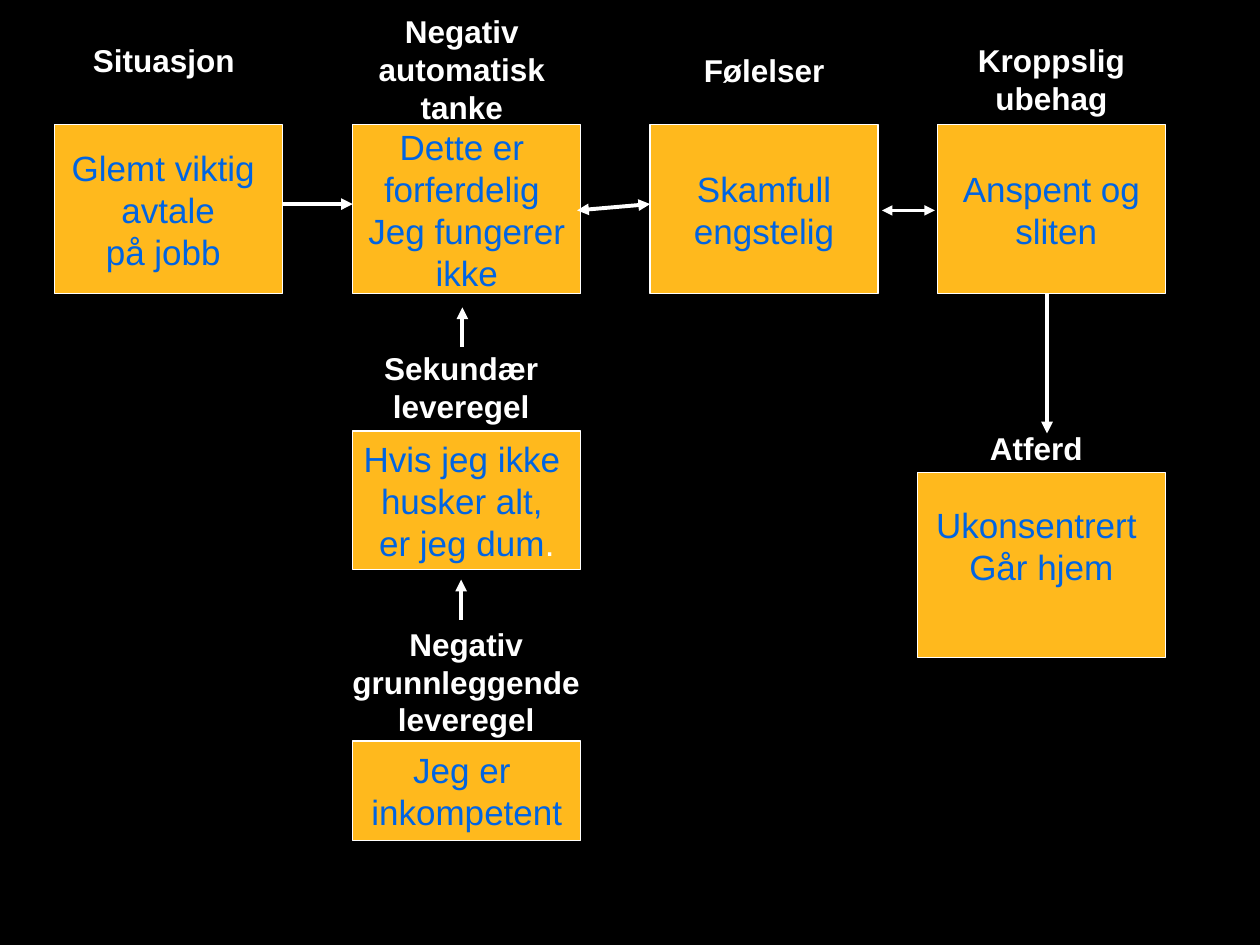
from typing import NamedTuple

from lxml import etree
from pptx import Presentation
from pptx import util as u
from pptx.dml.color import RGBColor
from pptx.enum import shapes as es, text as et
from pptx.oxml.ns import qn

WHITE, BLACK, GOLD, BLUE = "FFFFFF", "000000", "FFB91D", "0064E2"
BOX_W, BOX_H, TOP = 1.81, 1.34, 0.99
COLS = (0.43, 2.8, 5.16, 7.44)
LABEL = {"name": "Arial", "size": u.Pt(18), "bold": True}
BODY = {"name": "Arial", "size": u.Pt(20), "bold": False}


class Box(NamedTuple):
    x: float
    y: float
    w: float
    h: float
    lines: tuple
    foot: float = 0.05


class Label(NamedTuple):
    x: float
    y: float
    w: float
    h: float
    text: str


class Arrow(NamedTuple):
    x1: float
    y1: float
    x2: float
    y2: float
    both: bool = False
    width: float = 2.25


BOXES = (
    Box(COLS[0], TOP, BOX_W, BOX_H, ("Glemt viktig ", "avtale", "på jobb ")),
    Box(COLS[1], TOP, BOX_W, BOX_H,
        ("Dette er ", "forferdelig ", "Jeg fungerer", "ikke")),
    Box(COLS[2], TOP, BOX_W, BOX_H, ("Skamfull", "engstelig")),
    Box(COLS[3], TOP, BOX_W, BOX_H, ("Anspent og", " sliten")),
    Box(7.28, 3.75, 1.97, 1.47, ("Ukonsentrert ", "Går hjem"), 0.36),
    Box(COLS[1], 3.42, BOX_W, 1.1,
        ("Hvis jeg ikke ", "husker alt, ", "er jeg dum.")),
    Box(COLS[1], 5.88, BOX_W, 0.79, ("Jeg er ", "inkompetent")),
)
LABELS = (
    Label(COLS[0], 0.28, BOX_W, 0.4, "Situasjon "),
    Label(2.72, 0.05, 1.89, 1, "Negativ automatisk tanke"),
    Label(COLS[2], 0.36, BOX_W, 0.4, "Følelser"),
    Label(COLS[3], 0.28, BOX_W, 0.7, "Kroppslig ubehag"),
    Label(7.28, 3.36, 1.89, 0.4, "Atferd"),
    Label(2.56, 2.72, 2.2, 0.7, "Sekundær leveregel"),
    Label(2.32, 4.91, 2.76, 1, "Negativ grunnleggende leveregel"),
)
ARROWS = (
    Arrow(3.66, 4.92, 3.66, 4.6),
    Arrow(3.67, 2.75, 3.67, 2.44),
    Arrow(2.24, 1.62, 2.8, 1.62),
    Arrow(4.58, 1.67, 5.16, 1.62, True),
    Arrow(8.31, 2.33, 8.31, 3.44),
    Arrow(7, 1.67, 7.42, 1.67, True, 1.5),
)


def paint(fmt, color: str) -> None:
    """Give a fill a solid colour."""
    fmt.solid()
    fmt.fore_color.rgb = RGBColor.from_string(color)


def add_run(para, words: str, color: str, style: dict) -> None:
    run = para.add_run()
    run.text = words
    for key, value in style.items():
        setattr(run.font, key, value)
    paint(run.font.fill, color)


def draw_box(slide, box: Box) -> None:
    rect = slide.shapes.add_shape(
        es.MSO_SHAPE.RECTANGLE, *map(u.Inches, box[:4]))
    rect.shadow.inherit = False
    paint(rect.fill, GOLD)
    paint(rect.line.fill, WHITE)
    rect.line.width = u.Pt(0.75)
    frame = rect.text_frame
    frame.word_wrap = False
    frame.vertical_anchor = et.MSO_ANCHOR.MIDDLE
    frame.margin_bottom = u.Inches(box.foot)
    for i, line in enumerate(box.lines):
        para = frame.add_paragraph() if i else frame.paragraphs[0]
        para.alignment = et.PP_ALIGN.CENTER
        # A closing full stop is white
        words = line.removesuffix(".")
        add_run(para, words, BLUE, BODY)
        if words != line:
            add_run(para, ".", WHITE, BODY)


def draw_label(slide, label: Label) -> None:
    frame = slide.shapes.add_textbox(*map(u.Inches, label[:4])).text_frame
    frame.word_wrap = True
    frame.auto_size = et.MSO_AUTO_SIZE.SHAPE_TO_FIT_TEXT
    para = frame.paragraphs[0]
    para.alignment = et.PP_ALIGN.CENTER
    add_run(para, label.text, WHITE, LABEL)


def draw_arrow(slide, arrow: Arrow) -> None:
    link = slide.shapes.add_connector(
        es.MSO_CONNECTOR.STRAIGHT, *map(u.Inches, arrow[:4]))
    paint(link.line.fill, WHITE)
    link.line.width = u.Pt(arrow.width)
    props = link.line._get_or_add_ln()
    for tag in ("a:headEnd", "a:tailEnd") if arrow.both else ("a:tailEnd",):
        etree.SubElement(props, qn(tag), type="triangle")
    etree.SubElement(link._element.spPr, qn("a:effectLst"))


def main() -> None:
    prs = Presentation()
    prs.slide_width, prs.slide_height = u.Inches(10), u.Inches(7.5)
    slide = prs.slides.add_slide(prs.slide_layouts[6])
    paint(slide.background.fill, BLACK)

    # Boxes, then headings, then arrows on top
    for box in BOXES:
        draw_box(slide, box)
    for label in LABELS:
        draw_label(slide, label)
    for arrow in ARROWS:
        draw_arrow(slide, arrow)
    prs.save("out.pptx")


if __name__ == "__main__":
    main()
